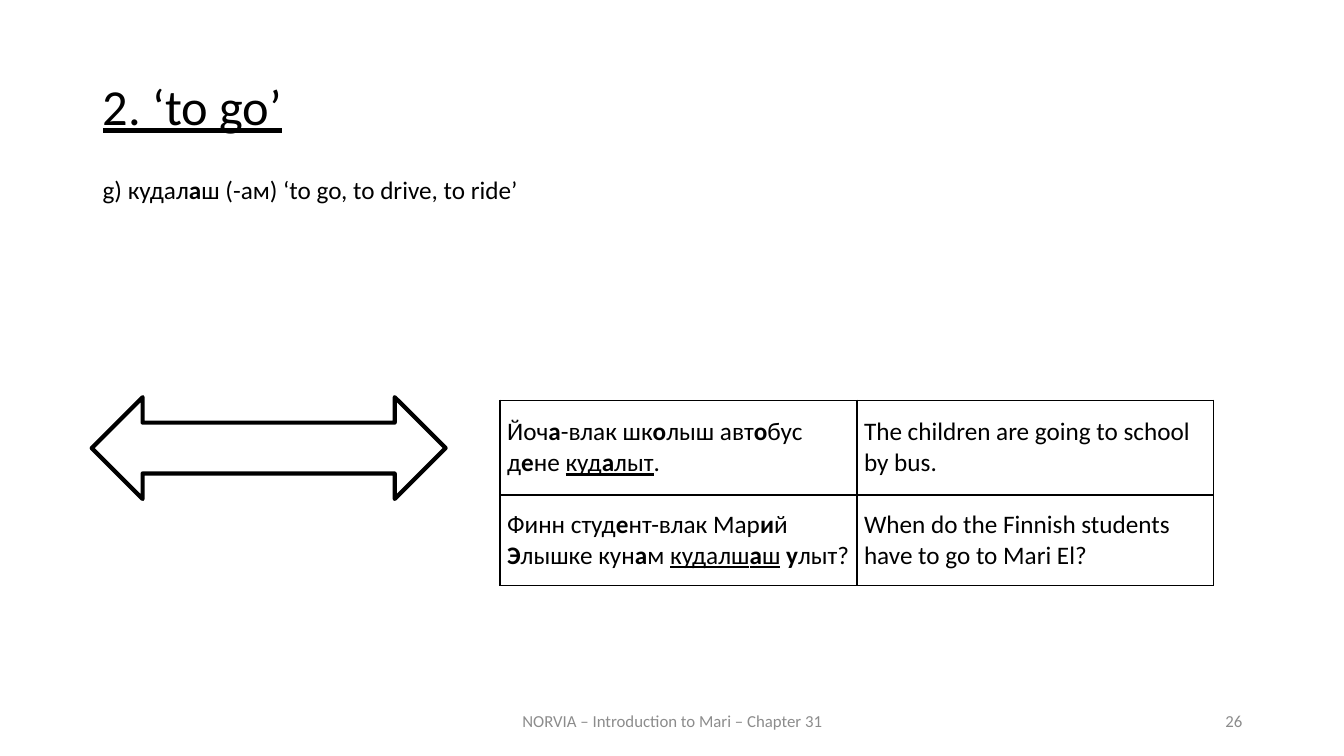
import pptx
import pptx.dml.color
import pptx.enum.shapes
import pptx.enum.text
import pptx.oxml
import pptx.oxml.ns
import pptx.util

Inches = pptx.util.Inches
Pt = pptx.util.Pt
Align = pptx.enum.text.PP_ALIGN
Anchor = pptx.enum.text.MSO_ANCHOR


def colour(value):
    """Turn a hex string into a colour."""
    return pptx.dml.color.RGBColor.from_string(value)


class LessonPage:
    """Holds the lesson style and the current slide."""

    font = "Calibri"
    ink = "000000"
    grey = "8C8C8C"

    def __init__(self, deck):
        """Add a slide with only a title."""
        self.page = deck.slides.add_slide(deck.slide_layouts[5])

    def fill_paragraph(self, frame, text, size=18, ink=ink, align=Align.LEFT):
        """Set one paragraph, with *bold* and _underlined_ parts."""
        para = frame.paragraphs[0]
        para.alignment = align
        for line_index, part in enumerate(text.split("_")):
            for bold_index, piece in enumerate(part.split("*")):
                if piece:
                    span = para.add_run()
                    span.text = piece
                    span.font.name = self.font
                    span.font.size = Pt(size)
                    span.font.color.rgb = colour(ink)
                    span.font.bold = bold_index % 2 == 1
                    span.font.underline = line_index % 2 == 1
        return para

    def title(self, text, left, top, width, height):
        """Place and fill the title placeholder."""
        box = self.page.shapes.title
        box.left, box.top = Inches(left), Inches(top)
        box.width, box.height = Inches(width), Inches(height)
        frame = box.text_frame
        frame.vertical_anchor = Anchor.TOP
        frame.auto_size = pptx.enum.text.MSO_AUTO_SIZE.NONE
        para = self.fill_paragraph(frame, text, 36, align=Align.JUSTIFY)
        para.line_spacing = 0.9
        para.space_before = Pt(12)

    def text(self, text, left, top, width, height, anchor=Anchor.TOP, **style):
        """Add a wrapping text box."""
        box = self.page.shapes.add_textbox(
            Inches(left), Inches(top), Inches(width), Inches(height))
        box.text_frame.word_wrap = True
        box.text_frame.vertical_anchor = anchor
        self.fill_paragraph(box.text_frame, text, **style)

    def footer(self, text, left, width, align):
        """Add a small grey text at the foot of the slide."""
        self.text(text, left, 6.95, width, 0.4, Anchor.MIDDLE,
                  size=12, ink=self.grey, align=align)

    def double_arrow(self, left, top, width, height):
        """Add an outlined arrow that points both ways."""
        arrow = self.page.shapes.add_shape(
            pptx.enum.shapes.MSO_SHAPE.LEFT_RIGHT_ARROW,
            Inches(left), Inches(top), Inches(width), Inches(height))
        arrow.shadow.inherit = False
        arrow.fill.background()
        arrow.line.color.rgb = colour(self.ink)
        arrow.line.width = Pt(3)

    def border(self, cell):
        """Draw a thin line on each side of a cell."""
        properties = cell._tc.get_or_add_tcPr()
        for side in ("lnL", "lnR", "lnT", "lnB"):
            properties.append(pptx.oxml.parse_xml(
                f'<a:{side} {pptx.oxml.ns.nsdecls("a")} w="{Pt(1)}"><a:solidFill>'
                f'<a:srgbClr val="{self.ink}"/></a:solidFill></a:{side}>'))

    def table(self, rows, left, top, column_width, row_heights):
        """Add a plain bordered table."""
        columns = len(rows[0])
        table = self.page.shapes.add_table(
            len(rows), columns, Inches(left), Inches(top),
            Inches(column_width * columns), Inches(sum(row_heights))).table
        table.first_row = table.horz_banding = False
        for column in table.columns:
            column.width = Inches(column_width)
        for row, height, texts in zip(table.rows, row_heights, rows):
            row.height = Inches(height)
            for cell, text in zip(row.cells, texts):
                self.border(cell)
                cell.fill.background()
                cell.vertical_anchor = Anchor.MIDDLE
                cell.margin_left = cell.margin_right = Inches(0.07)
                cell.margin_top = cell.margin_bottom = 0
                self.fill_paragraph(cell.text_frame, text)


def main():
    """Build the slide and save it."""
    deck = pptx.Presentation()
    deck.slide_width, deck.slide_height = Inches(13.33), Inches(7.5)
    lesson = LessonPage(deck)
    lesson.title("_2. ‘to go’_", 0.92, 0.76, 11.5, 0.83)
    lesson.footer("NORVIA – Introduction to Mari – Chapter 31", 4.42, 4.5, Align.CENTER)
    lesson.footer("26", 9.42, 3, Align.RIGHT)
    lesson.text("g) кудал*а*ш (-ам) ‘to go, to drive, to ride’", 0.92, 1.68, 5.17, 0.4)
    examples = [
        ("Йоч*а*-влак шк*о*лыш авт*о*бус д*е*не _куд*а*лыт_.",
         "The children are going to school by bus."),
        ("Финн студ*е*нт-влак Мар*и*й *Э*лышке кун*а*м _кудалш*а*ш_ *у*лыт?",
         "When do the Finnish students have to go to Mari El?"),
    ]
    lesson.table(examples, 4.96, 3.97, 3.54, (0.94, 0.9))
    lesson.double_arrow(0.91, 3.94, 3.51, 1.01)
    deck.save("out.pptx")


if __name__ == "__main__":
    main()
